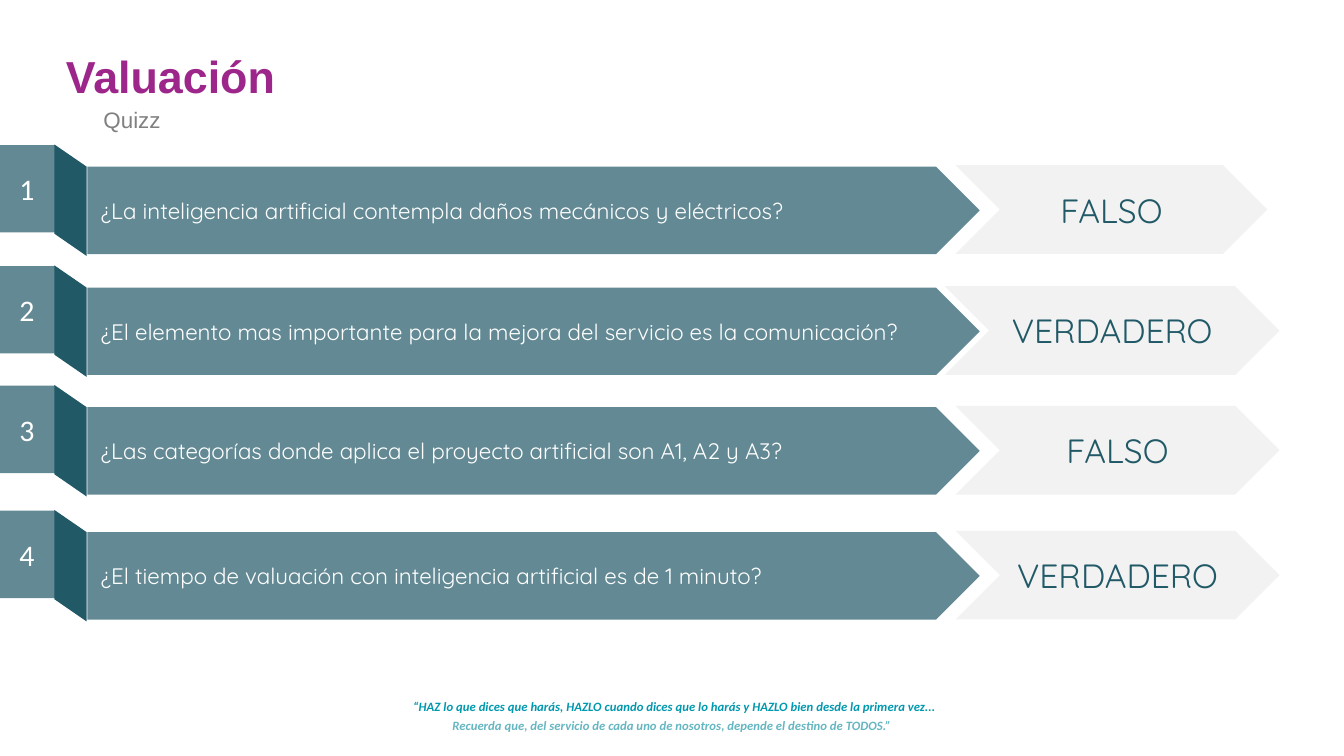
from dataclasses import dataclass
from lxml.etree import SubElement
from pptx import Presentation
from pptx.dml.color import RGBColor
from pptx.enum.shapes import MSO_SHAPE
from pptx.enum.text import MSO_ANCHOR, PP_ALIGN
from pptx.oxml.ns import qn
from pptx.slide import Slide
from pptx.util import Inches, Pt

COLUMNS, ROWS = 100, 56.25
WIDTH = Inches(10)
HEIGHT = WIDTH * 9 // 16
QUESTIONS = [
    (12.4, "¿La inteligencia artificial contempla daños mecánicos y eléctricos?",
     "FALSO", 71.1, 23.2),
    (21.4, "¿El elemento mas importante para la mejora del servicio es la comunicación?",
     "VERDADERO", 70.3, 24.9),
    (30.3, "¿Las categorías donde aplica el proyecto artificial son A1, A2 y A3?",
     "FALSO", 71.1, 24.1),
    (39.6, "¿El tiempo de valuación con inteligencia artificial es de 1 minuto?",
     "VERDADERO", 71.1, 24.1),
]


def color(value):
    """Turn a hex string into a colour."""
    return RGBColor.from_string(value)


def place(column, row, columns, rows):
    """Turn grid columns and rows into slide lengths."""
    return (int(WIDTH * column / COLUMNS), int(HEIGHT * row / ROWS),
            int(WIDTH * columns / COLUMNS), int(HEIGHT * rows / ROWS))


def write(frame, text, size, tint, font, align=PP_ALIGN.LEFT,
          anchor=MSO_ANCHOR.MIDDLE, bold=False, italic=False, before=0):
    """Fill a text frame with one formatted paragraph."""
    frame.word_wrap = True
    frame.vertical_anchor = anchor
    para = frame.paragraphs[0]
    para.alignment = align
    para.space_before = Pt(before)
    span = para.add_run()
    span.text = text
    span.font.size = Pt(size)
    span.font.name = font
    span.font.bold = bold
    span.font.italic = italic
    span.font.color.rgb = color(tint)


@dataclass
class Quiz:
    """Hold the quiz style and the current slide."""
    page: Slide
    dark: str = "215967"
    pale: str = "F2F2F2"
    white: str = "FFFFFF"
    font: str = "Quicksand"
    plain: str = "Calibri"
    opacity: int = 70

    def shape(self, kind, area, tint, opacity=100):
        """Draw a filled shape without outline or shadow."""
        shape = self.page.shapes.add_shape(kind, *place(*area))
        shape.shadow.inherit = False
        shape.fill.solid()
        shape.fill.fore_color.rgb = color(tint)
        shape.line.fill.background()
        if opacity < 100:
            fill = shape.fill._xPr.find(qn("a:solidFill"))
            SubElement(fill[0], qn("a:alpha"), val=str(opacity * 1000))
        return shape

    def question(self, row, text):
        """Draw the arrow that holds a question."""
        arrow = self.shape(MSO_SHAPE.PENTAGON, (6.5, row, 66.4, 6.5), self.dark, self.opacity)
        write(arrow.text_frame, text, 12, self.white, self.font)

    def number(self, row, text):
        """Draw the numbered tab with its folded edge."""
        tab = self.shape(MSO_SHAPE.RECTANGLE, (-0.1, row - 1.6, 4.2, 6.5), self.dark, self.opacity)
        write(tab.text_frame, text, 16, self.white, self.plain, PP_ALIGN.CENTER)
        fold = self.shape(MSO_SHAPE.PARALLELOGRAM, (1.1, row + 1.3, 8.3, 2.4), self.dark)
        fold.rotation = 90
        fold.adjustments[0] = 0.69

    def answer(self, column, row, columns, text):
        """Draw the chevron that holds an answer."""
        chevron = self.shape(MSO_SHAPE.CHEVRON, (column, row - 0.1, columns, 6.6), self.pale)
        write(chevron.text_frame, text, 18, self.dark, self.font, PP_ALIGN.CENTER)

    def label(self, area, text, inset=0.02, **style):
        """Add a text box with narrow margins."""
        box = self.page.shapes.add_textbox(*place(*area))
        frame = box.text_frame
        frame.margin_left = frame.margin_right = Inches(0.04)
        frame.margin_top = frame.margin_bottom = Inches(inset)
        write(frame, text, **style)

    def quote(self, area, text, tint):
        """Add one line of the closing quote."""
        self.label(area, text, inset=0.05, size=6.8, tint=tint, font=self.plain,
                   align=PP_ALIGN.CENTER, anchor=MSO_ANCHOR.TOP, bold=True,
                   italic=True, before=7)


def main():
    """Build and save the quiz slide."""
    deck = Presentation()
    deck.slide_width, deck.slide_height = WIDTH, HEIGHT
    quiz = Quiz(deck.slides.add_slide(deck.slide_layouts[6]))
    for index, (row, question, *_) in enumerate(QUESTIONS, 1):
        quiz.question(row, question)
        quiz.number(row, str(index))
    for row, _, answer, column, columns in QUESTIONS:
        quiz.answer(column, row, columns, answer)
    quiz.label((4.5, 3.7, 27.7, 3.8), "Valuación", size=24, tint="9D268B",
               font="Arial", bold=True)
    quiz.label((7.3, 7.5, 29.6, 2.8), "Quizz", size=12, tint="808080", font="Arial")
    quiz.quote((30.2, 51.5, 40, 1.6),
               "“HAZ lo que dices que harás, HAZLO cuando dices que lo harás "
               "y HAZLO bien desde la primera vez...", "0098AE")
    quiz.quote((30, 52.9, 40, 2.5),
               "Recuerda que, del servicio de cada uno de nosotros, "
               "depende el destino de TODOS.”", "64B6C1")
    deck.save("out.pptx")


if __name__ == "__main__":
    main()
